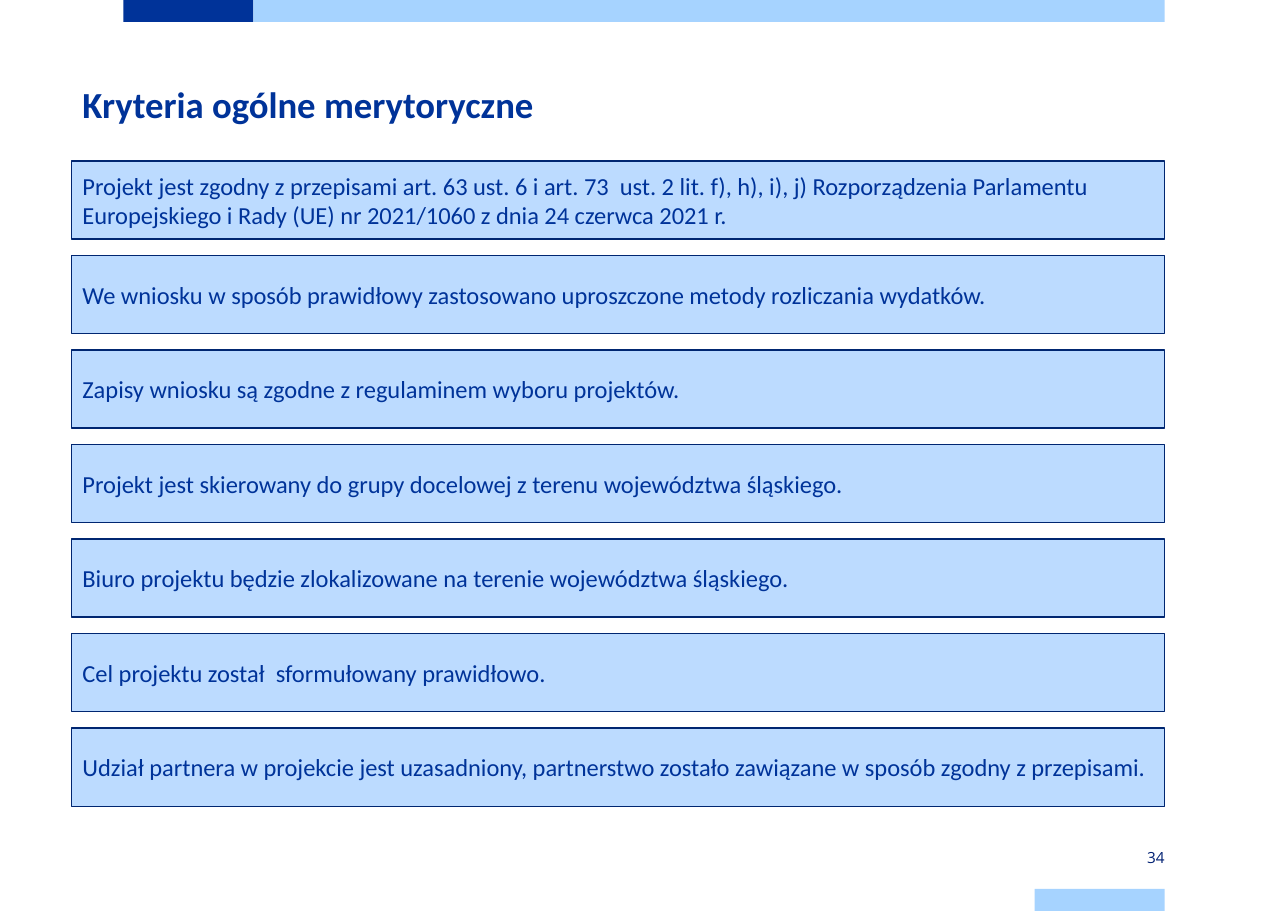
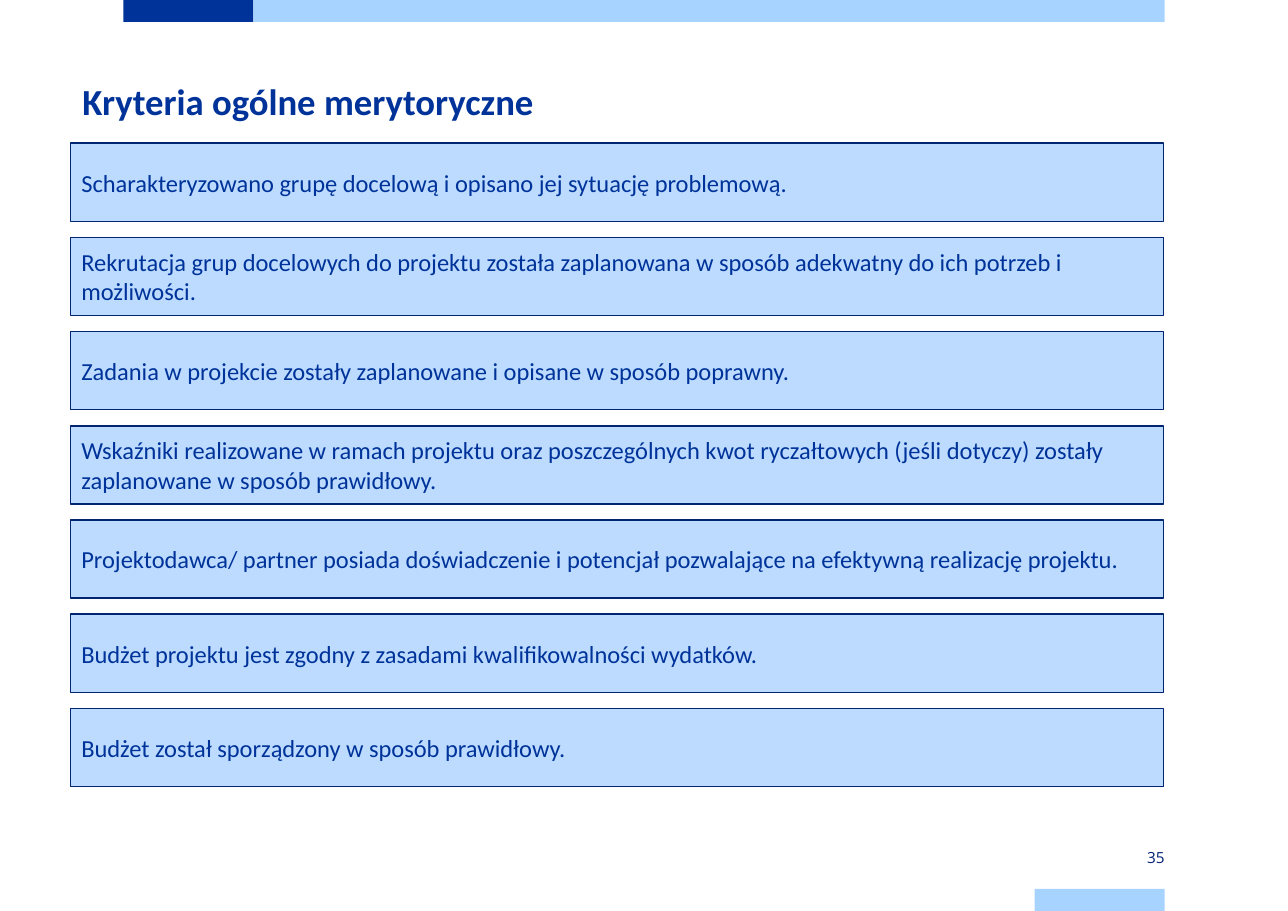
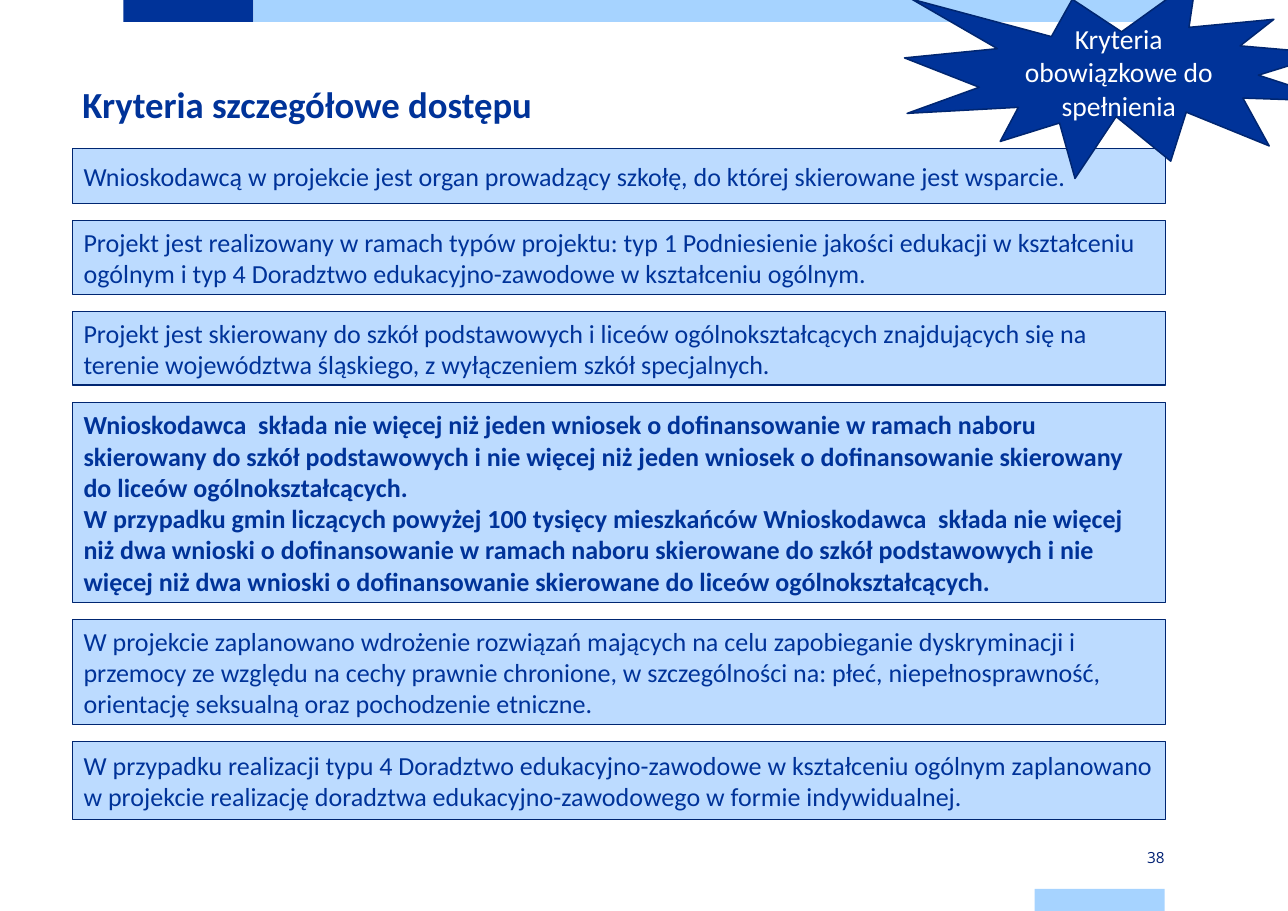
"""Builds three slides listing the project selection criteria."""
import pptx
import pptx.dml.color
import pptx.enum.shapes
import pptx.enum.text
import pptx.util

Inches = pptx.util.Inches
SHAPE = pptx.enum.shapes.MSO_SHAPE
ALIGN = pptx.enum.text.PP_ALIGN
ANCHOR = pptx.enum.text.MSO_ANCHOR

COLOURS = {
    "navy": "003399",
    "sky": "A6D3FF",
    "pale": "BCDBFF",
    "outline": "002671",
    "number": "002073",
    "white": "FFFFFF",
}
BANDS = [
    (1.12, 0, 1.18, "navy"),
    (2.3, 0, 8.27, "sky"),
    (9.39, 8.07, 1.18, "sky"),
]
BAND_HEIGHT = 0.2
ROW_WIDTH = 9.92
ROW_HEIGHT = 0.71

CRITERIA_SLIDES = [
    {
        "number": "34", "title": "Kryteria ogólne merytoryczne", "title_top": 0.69,
        "left": 0.65, "top": 1.46, "bottom": 7.32, "size": 16,
        "rows": [
            ("Projekt jest zgodny z przepisami art. 63 ust. 6 i art. 73  ust. 2 lit. f), h), i), j) Rozporządzenia "
             "Parlamentu Europejskiego i Rady (UE) nr 2021/1060 z dnia 24 czerwca 2021 r.", ROW_HEIGHT),
            ("We wniosku w sposób prawidłowy zastosowano uproszczone metody rozliczania wydatków.", ROW_HEIGHT),
            ("Zapisy wniosku są zgodne z regulaminem wyboru projektów.", ROW_HEIGHT),
            ("Projekt jest skierowany do grupy docelowej z terenu województwa śląskiego.", ROW_HEIGHT),
            ("Biuro projektu będzie zlokalizowane na terenie województwa śląskiego.", ROW_HEIGHT),
            ("Cel projektu został  sformułowany prawidłowo.", ROW_HEIGHT),
            ("Udział partnera w projekcie jest uzasadniony, partnerstwo zostało zawiązane w sposób zgodny "
             "z przepisami.", ROW_HEIGHT),
        ],
    },
    {
        "number": "35", "title": "Kryteria ogólne merytoryczne", "title_top": 0.67,
        "left": 0.64, "top": 1.3, "bottom": 7.14, "size": 16,
        "rows": [
            ("Scharakteryzowano grupę docelową i opisano jej sytuację problemową.", ROW_HEIGHT),
            ("Rekrutacja grup docelowych do projektu została zaplanowana w sposób adekwatny do ich potrzeb "
             "i możliwości.", ROW_HEIGHT),
            ("Zadania w projekcie zostały zaplanowane i opisane w sposób poprawny.", ROW_HEIGHT),
            ("Wskaźniki realizowane w ramach projektu oraz poszczególnych kwot ryczałtowych (jeśli dotyczy) "
             "zostały zaplanowane w sposób prawidłowy.", ROW_HEIGHT),
            ("Projektodawca/ partner posiada doświadczenie i potencjał pozwalające na efektywną realizację "
             "projektu.", ROW_HEIGHT),
            ("Budżet projektu jest zgodny z zasadami kwalifikowalności wydatków.", ROW_HEIGHT),
            ("Budżet został sporządzony w sposób prawidłowy.", ROW_HEIGHT),
        ],
    },
    {
        "number": "38", "title": "Kryteria szczegółowe dostępu", "title_top": 0.69,
        "left": 0.66, "top": 1.35, "bottom": 7.44, "size": 17,
        "bold_row": 3, "burst": "Kryteria obowiązkowe do spełnienia",
        "rows": [
            ("Wnioskodawcą w projekcie jest organ prowadzący szkołę, do której skierowane jest wsparcie.", 0.5),
            ("Projekt jest realizowany w ramach typów projektu: typ 1 Podniesienie jakości edukacji w kształceniu "
             "ogólnym i typ 4 Doradztwo edukacyjno-zawodowe w kształceniu ogólnym.", 0.67),
            ("Projekt jest skierowany do szkół podstawowych i liceów ogólnokształcących znajdujących się na "
             "terenie województwa śląskiego, z wyłączeniem szkół specjalnych.", 0.67),
            ("Wnioskodawca  składa nie więcej niż jeden wniosek o dofinansowanie w ramach naboru skierowany do "
             "szkół podstawowych i nie więcej niż jeden wniosek o dofinansowanie skierowany do liceów "
             "ogólnokształcących.\n"
             "W przypadku gmin liczących powyżej 100 tysięcy mieszkańców Wnioskodawca  składa nie więcej niż dwa "
             "wnioski o dofinansowanie w ramach naboru skierowane do szkół podstawowych i nie więcej niż dwa "
             "wnioski o dofinansowanie skierowane do liceów ogólnokształcących.", 1.82),
            ("W projekcie zaplanowano wdrożenie rozwiązań mających na celu zapobieganie dyskryminacji i przemocy "
             "ze względu na cechy prawnie chronione, w szczególności na: płeć, niepełnosprawność, orientację "
             "seksualną oraz pochodzenie etniczne.", 0.95),
            ("W przypadku realizacji typu 4 Doradztwo edukacyjno-zawodowe w kształceniu ogólnym zaplanowano "
             "w projekcie realizację doradztwa edukacyjno-zawodowego w formie indywidualnej.", ROW_HEIGHT),
        ],
    },
]


def write(shape, text, *, size, colour="navy", font="Calibri", bold=False, align=ALIGN.LEFT, anchor=ANCHOR.MIDDLE):
    frame = shape.text_frame
    frame.word_wrap = True
    frame.vertical_anchor = anchor
    frame.text = text
    for paragraph in frame.paragraphs:
        paragraph.alignment = align
        paragraph.font.name = font
        paragraph.font.size = pptx.util.Pt(size)
        paragraph.font.bold = bold
        paragraph.font.color.rgb = pptx.dml.color.RGBColor.from_string(COLOURS[colour])
    return frame


def draw(slide, kind, box, fill, outlined=True):
    shape = slide.shapes.add_shape(kind, *map(Inches, box))
    shape.shadow.inherit = False
    shape.fill.solid()
    shape.fill.fore_color.rgb = pptx.dml.color.RGBColor.from_string(COLOURS[fill])
    if outlined:
        shape.line.color.rgb = pptx.dml.color.RGBColor.from_string(COLOURS["outline"])
        shape.line.width = pptx.util.Pt(1)
    else:
        shape.line.fill.background()
    return shape


deck = pptx.Presentation()
deck.slide_width = Inches(11.69)
deck.slide_height = Inches(8.27)

for content in CRITERIA_SLIDES:
    slide = deck.slides.add_slide(deck.slide_layouts[6])

    for left, top, width, fill in BANDS:
        draw(slide, SHAPE.RECTANGLE, (left, top, width, BAND_HEIGHT), fill, outlined=False)

    page_number = slide.shapes.add_textbox(Inches(9.39), Inches(7.68), Inches(1.18), Inches(0.2))
    number_frame = write(page_number, content["number"], size=10, colour="number", font="Open Sans",
                         align=ALIGN.RIGHT)
    number_frame.margin_left = number_frame.margin_right = 0
    number_frame.margin_top = number_frame.margin_bottom = Inches(0.08)

    title = slide.shapes.add_textbox(Inches(0.65), Inches(content["title_top"]), Inches(9.69), Inches(0.5))
    write(title, content["title"], size=24, bold=True, anchor=ANCHOR.TOP)

    rows = content["rows"]
    filled = sum(height for _, height in rows)
    gap = (content["bottom"] - content["top"] - filled) / (len(rows) - 1)
    top = content["top"]
    for index, (criterion, height) in enumerate(rows):
        row = draw(slide, SHAPE.RECTANGLE, (content["left"], top, ROW_WIDTH, height), "pale")
        write(row, criterion, size=content["size"], bold=index == content.get("bold_row"))
        top += height + gap

    if "burst" in content:
        burst = draw(slide, SHAPE.EXPLOSION1, (8.21, -0.2, 3.94, 1.82), "navy")
        write(burst, content["burst"], size=18, colour="white", align=ALIGN.CENTER)

deck.save("out.pptx")
